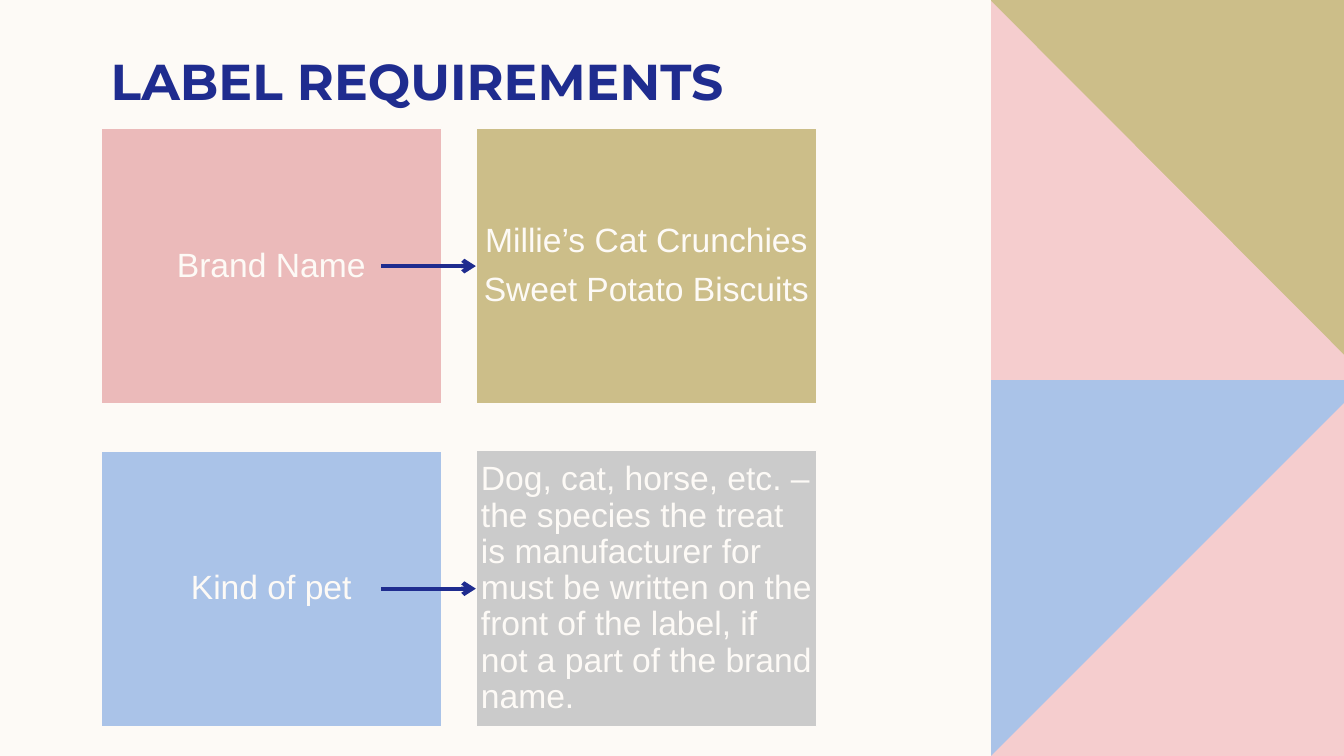
from dataclasses import dataclass
from lxml.etree import SubElement
from pptx import Presentation
from pptx.dml.color import RGBColor as RGB
from pptx.enum.shapes import MSO_CONNECTOR as LINK, MSO_SHAPE as SHAPE
from pptx.enum.text import MSO_ANCHOR as ANCHOR, PP_ALIGN as ALIGN
from pptx.oxml.ns import qn
from pptx.util import Inches, Pt


@dataclass(frozen=True)
class Theme:
    cream: str = "FDFAF6"
    navy: str = "1F2C8F"
    rose: str = "EBBABA"
    blush: str = "F5CDCE"
    gold: str = "CCBE89"
    blue: str = "AAC3E8"
    grey: str = "CBCBCB"
    head: str = "Montserrat"
    body: str = "Arial"
    head_size: int = 36
    body_size: int = 24


T = Theme()


def add_run(para, text, font, size, color, bold=False):
    run = para.add_run()
    run.text = text
    run.font.name = font
    run.font.size = Pt(size)
    run.font.bold = bold
    run.font.color.rgb = RGB.from_string(color)


def paint(shape, color):
    shape.shadow.inherit = False
    shape.fill.solid()
    shape.fill.fore_color.rgb = RGB.from_string(color)
    shape.line.fill.background()


def add_patch(slide, points, color):
    spots = [(Inches(x), Inches(y)) for x, y in points]
    form = slide.shapes.build_freeform(*spots[0])
    form.add_line_segments(spots[1:], close=True)
    paint(form.convert_to_shape(), color)


def add_band(slide, x, y, w, h):
    """Side panel: two blocks, each cut by a diagonal."""
    right, low, mid = x + w, y + h, y + h / 2
    add_patch(slide, [(x, mid), (right, mid), (right, low), (x, low)], T.blue)
    add_patch(slide, [(right, low - w), (right, low), (x, low)], T.blush)
    add_patch(slide, [(x, y), (right, y), (right, mid), (x, mid)], T.gold)
    add_patch(slide, [(x, y + 0.01), (right, y + w + 0.02),
                      (right, mid + 0.02), (x, mid + 0.02)], T.blush)


def add_title(slide, x, y, w, h, text):
    frame = slide.shapes.add_textbox(
        Inches(x), Inches(y), Inches(w), Inches(h)).text_frame
    frame.word_wrap = True
    frame.margin_top = frame.margin_bottom = 0
    add_run(frame.paragraphs[0], text, T.head, T.head_size, T.navy, True)


def add_card(slide, x, y, w, h, lines, color, edge, align=ALIGN.CENTER):
    card = slide.shapes.add_shape(
        SHAPE.RECTANGLE, Inches(x), Inches(y), Inches(w), Inches(h))
    paint(card, color)
    card.line.color.rgb = RGB.from_string(T.cream)
    card.line.width = Pt(edge)
    frame = card.text_frame
    frame.word_wrap = True
    frame.vertical_anchor = ANCHOR.MIDDLE
    frame.margin_left = frame.margin_right = Inches(0.05)
    frame.margin_top = frame.margin_bottom = Inches(0.05)
    for i, line in enumerate(lines):
        para = frame.add_paragraph() if i else frame.paragraphs[0]
        para.alignment = align
        para.line_spacing = 0.9
        para.space_after = Pt(0.35 * T.body_size)
        add_run(para, line, T.body, T.body_size, T.cream)
    return card


def add_arrow(slide, card, length):
    """Arrow that ends at the middle of the card's left side."""
    y = card.top + card.height // 2
    arrow = slide.shapes.add_connector(
        LINK.STRAIGHT, card.left - Inches(length), y, card.left, y)
    arrow.end_connect(card, 1)
    arrow.line.color.rgb = RGB.from_string(T.navy)
    arrow.line.width = Pt(3)
    SubElement(arrow.line._get_or_add_ln(), qn("a:tailEnd"), type="arrow")
    SubElement(arrow._element.spPr, qn("a:effectLst"))


def add_grid(slide, x, y, w, h, rows):
    """Rows of a label card and its detail card, then the arrows."""
    wide, tall = 3.38, 2.74
    col, step = w - wide, (h - tall) / (len(rows) - 1)
    ends = []
    for i, (name, detail) in enumerate(rows):
        top = y + i * step
        add_card(slide, x, top, wide, tall, *name)
        ends.append(add_card(slide, x + col, top, wide, tall, *detail))
    for card in ends:
        add_arrow(slide, card, 0.94)


def main():
    deck = Presentation()
    deck.slide_width, deck.slide_height = Inches(13.33), Inches(7.5)
    slide = deck.slides.add_slide(deck.slide_layouts[6])
    back = slide.background.fill
    back.solid()
    back.fore_color.rgb = RGB.from_string(T.cream)

    add_band(slide, 9.83, 0, 3.5, 7.5)
    add_title(slide, 1, 0.5, 11.5, 0.52, "LABEL REQUIREMENTS")
    species = ("Dog, cat, horse, etc. – the species the treat is manufacturer "
               "for must be written on the front of the label, if not a part "
               "of the brand name.")
    add_grid(slide, 1, 1.27, 7.1, 5.94, [
        ((["Brand Name"], T.rose, 1),
         (["Millie’s Cat Crunchies", "Sweet Potato Biscuits"], T.gold, 1.5)),
        ((["Kind of pet"], T.blue, 1.5),
         ([species], T.grey, 1, ALIGN.LEFT)),
    ])
    deck.save("out.pptx")


if __name__ == "__main__":
    main()
